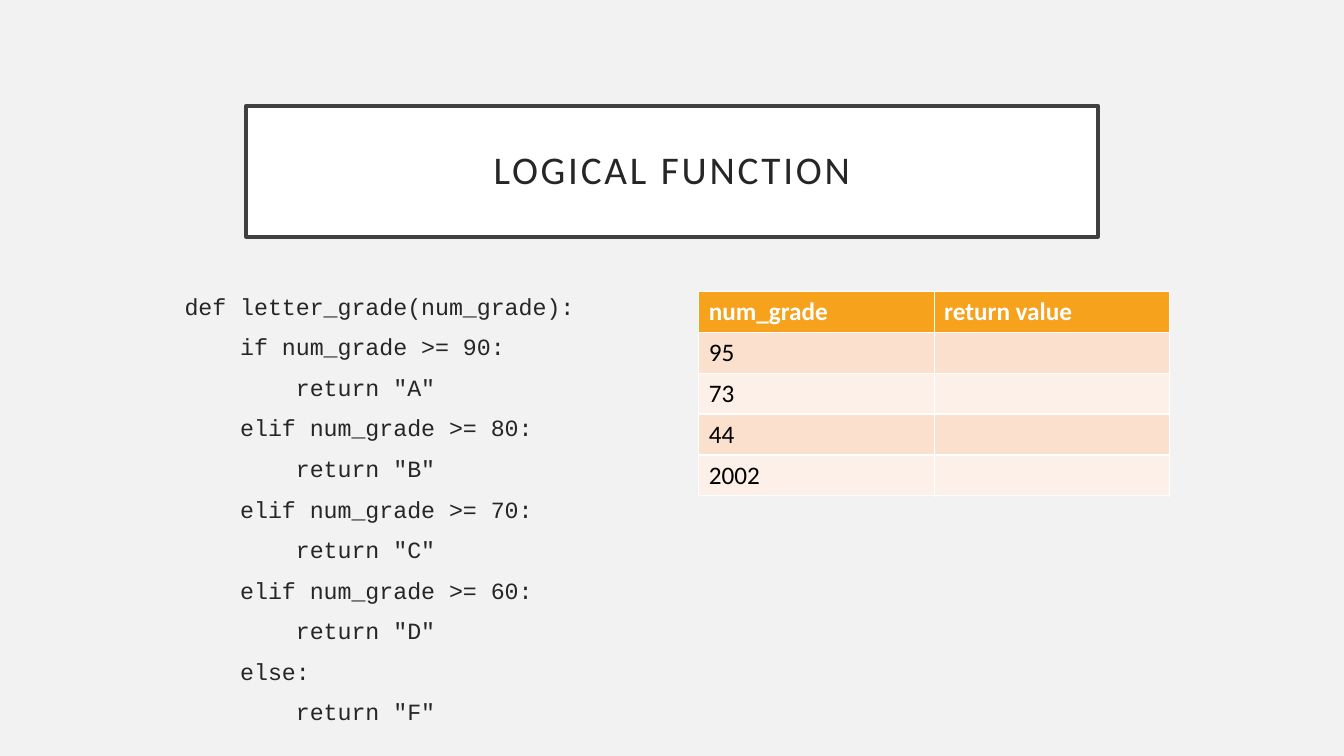
from pptx import Presentation
from pptx.dml.color import RGBColor
from pptx.enum.text import MSO_ANCHOR, MSO_AUTO_SIZE, PP_ALIGN
from pptx.oxml.ns import qn
from pptx.util import Inches, Pt

COLORS = {
    "background": "F2F2F2",
    "white": "FFFFFF",
    "frame": "404040",
    "text": "262626",
    "black": "000000",
    "header": "F6A21D",
    "odd_row": "FBE0CD",
    "even_row": "FDF0E8",
}
TITLE_FONT = {"name": "Calibri", "size": Pt(28), "bold": False}
CODE_FONT = {"name": "Courier New", "size": Pt(16.6), "bold": False}
HEADER_FONT = {"name": "Calibri", "size": Pt(18), "bold": True}
CELL_FONT = HEADER_FONT | {"bold": False}

CODE = """def letter_grade(num_grade):
    if num_grade >= 90:
        return "A"
    elif num_grade >= 80:
        return "B"
    elif num_grade >= 70:
        return "C"
    elif num_grade >= 60:
        return "D"
    else:
        return "F\""""
GRADES = [("num_grade", "return value"), ("95", ""), ("73", ""), ("44", ""), ("2002", "")]


def color(name):
    return RGBColor.from_string(COLORS[name])


def set_attributes(target, values):
    for name, value in values.items():
        setattr(target, name, value)


def format_font(font, values, color_name):
    set_attributes(font, values)
    font.color.rgb = color(color_name)


def fill_solid(fill, color_name):
    fill.solid()
    fill.fore_color.rgb = color(color_name)


def place(shape, left, top, width, height):
    set_attributes(shape, {
        "left": Inches(left), "top": Inches(top),
        "width": Inches(width), "height": Inches(height),
    })


def format_title(shape, text):
    place(shape, 2.44, 1.05, 8.45, 1.3)
    fill_solid(shape.fill, "white")
    shape.line.color.rgb = color("frame")
    shape.line.width = Pt(2.5)
    frame = shape.text_frame
    margins = {f"margin_{side}": Inches(0.2) for side in ("left", "top", "right", "bottom")}
    set_attributes(frame, margins | {
        "vertical_anchor": MSO_ANCHOR.MIDDLE, "auto_size": MSO_AUTO_SIZE.NONE, "word_wrap": True,
    })
    paragraph = frame.paragraphs[0]
    set_attributes(paragraph, {"alignment": PP_ALIGN.CENTER, "line_spacing": 0.9})
    run = paragraph.add_run()
    run.text = text
    format_font(run.font, TITLE_FONT, "text")
    run.font._element.set("spc", "200")


def format_code(shape, code):
    place(shape, 1.73, 2.88, 4.67, 4.33)
    frame = shape.text_frame
    set_attributes(frame, {
        "vertical_anchor": MSO_ANCHOR.TOP, "auto_size": MSO_AUTO_SIZE.NONE, "word_wrap": True,
    })
    for index, line in enumerate(code.split("\n")):
        paragraph = frame.add_paragraph() if index else frame.paragraphs[0]
        set_attributes(paragraph, {
            "alignment": PP_ALIGN.LEFT, "line_spacing": 0.9, "space_before": Pt(11 if index else 0),
        })
        properties = paragraph._p.get_or_add_pPr()
        properties.set("marL", "0")
        properties.set("indent", "0")
        properties.append(properties.makeelement(qn("a:buNone"), {}))
        run = paragraph.add_run()
        run.text = line
        format_font(run.font, CODE_FONT, "text")


def add_grade_table(slide, rows):
    table = slide.shapes.add_table(
        len(rows), len(rows[0]), Inches(6.93), Inches(2.89), Inches(4.67), Inches(2.03)
    ).table
    for row_index, row in enumerate(rows):
        if row_index == 0:
            fill_name, font, text_name = "header", HEADER_FONT, "white"
        else:
            fill_name = "odd_row" if row_index % 2 else "even_row"
            font, text_name = CELL_FONT, "black"
        for column_index, text in enumerate(row):
            cell = table.cell(row_index, column_index)
            fill_solid(cell.fill, fill_name)
            cell.text = text
            format_font(cell.text_frame.paragraphs[0].font, font, text_name)


def main():
    presentation = Presentation()
    presentation.slide_width = Inches(13.33)
    presentation.slide_height = Inches(7.5)
    slide = presentation.slides.add_slide(presentation.slide_layouts[1])
    fill_solid(slide.background.fill, "background")
    format_title(slide.shapes.title, "LOGICAL FUNCTION")
    format_code(slide.placeholders[1], CODE)
    add_grade_table(slide, GRADES)
    presentation.save("out.pptx")


if __name__ == "__main__":
    main()
